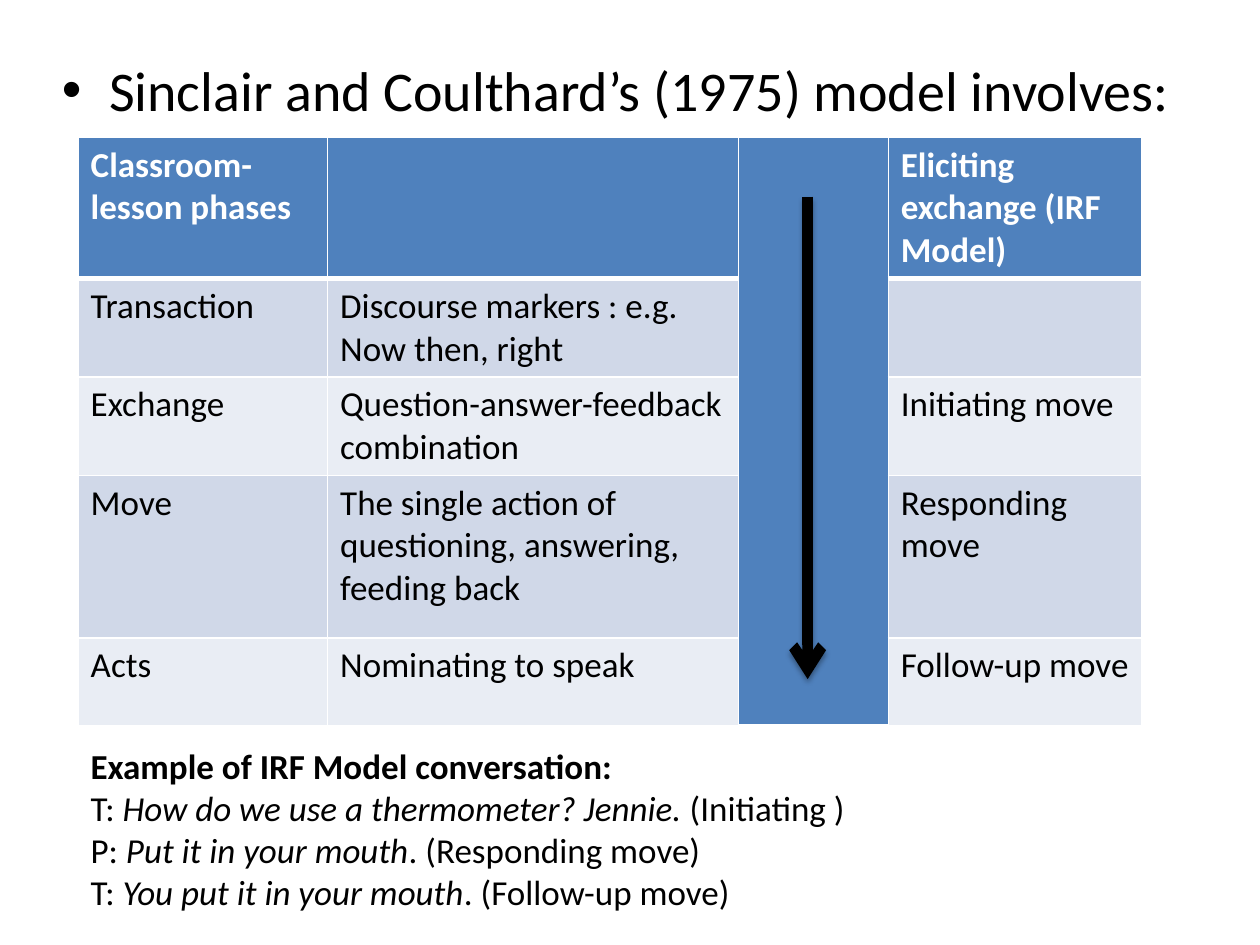
import pptx
import pptx.dml.color
import pptx.enum.dml
import pptx.enum.shapes
import pptx.oxml
import pptx.oxml.ns
import pptx.util
from pptx.util import Inches

FONT = "Calibri"
BLACK, WHITE, HEADER_BLUE = "000000", "FFFFFF", "4F81BD"
BANDS = ["D0D8E8", "E9EDF4"]

COLUMN_WIDTHS = [1.98, 3.26, 1.19, 2.01]
ROW_HEIGHTS = [0.99, 0.7, 0.7, 1.29, 0.7]
ARROW_COLUMN = 2
ROWS = [
    ["Classroom-lesson phases", "", "", "Eliciting exchange (IRF Model)"],
    ["Transaction", "Discourse markers : e.g. Now then, right", "", ""],
    ["Exchange", "Question-answer-feedback combination", "", "Initiating move"],
    ["Move", "The single action of questioning, answering, feeding back", "",
     "Responding move"],
    ["Acts", "Nominating to speak", "", "Follow-up move"],
]

# Speaker, utterance, comment
CONVERSATION = [
    ("T: ", "How do we use a thermometer? Jennie.", " (Initiating )"),
    ("P: ", "Put it in your mouth", ". (Responding move)"),
    ("T: ", "You put it in your mouth", ". (Follow-up move)"),
]


def color(value):
    return pptx.dml.color.RGBColor.from_string(value)


def xml(text):
    namespace = pptx.oxml.ns.nsdecls("a")
    return pptx.oxml.parse_xml(text.replace(" ", f" {namespace} ", 1))


def add_run(paragraph, text, size=20, fill=BLACK, bold=False, italic=False):
    run = paragraph.add_run()
    run.text = text
    font = run.font
    font.name, font.size = FONT, pptx.util.Pt(size)
    font.bold, font.italic = bold, italic
    font.color.rgb = color(fill)


def add_heading(slide, text):
    """Bulleted statement in the body placeholder; the slide has no title."""
    title = slide.shapes.title.element
    title.getparent().remove(title)
    body = slide.placeholders[1]
    body.left, body.top = Inches(0.39), Inches(0.39)
    body.width, body.height = Inches(9.3), Inches(6.8)
    add_run(body.text_frame.paragraphs[0], text, size=32)


def set_borders(cell, bottom_width):
    properties = cell._tc.get_or_add_tcPr()
    for side, width in [("L", 1), ("R", 1), ("T", 1), ("B", bottom_width)]:
        properties.append(xml(
            f'<a:ln{side} w="{pptx.util.Pt(width)}"><a:solidFill>'
            f'<a:srgbClr val="{WHITE}"/></a:solidFill></a:ln{side}>'))


def add_model_table(slide):
    frame = slide.shapes.add_table(
        len(ROWS), len(COLUMN_WIDTHS), Inches(0.62), Inches(1.09),
        Inches(sum(COLUMN_WIDTHS)), Inches(sum(ROW_HEIGHTS)))
    table = frame.table
    for column, width in zip(table.columns, COLUMN_WIDTHS):
        column.width = Inches(width)
    for row, height in zip(table.rows, ROW_HEIGHTS):
        row.height = Inches(height)

    for row_index, texts in enumerate(ROWS):
        is_header = row_index == 0
        for column_index, text in enumerate(texts):
            cell = table.cell(row_index, column_index)
            is_blue = is_header or column_index == ARROW_COLUMN
            set_borders(cell, 3 if is_header else 1)
            cell.fill.solid()
            cell.fill.fore_color.rgb = color(
                HEADER_BLUE if is_blue else BANDS[(row_index - 1) % 2])
            if text:
                add_run(cell.text_frame.paragraphs[0], text,
                        fill=WHITE if is_header else BLACK, bold=is_header)
    table.cell(0, ARROW_COLUMN).merge(table.cell(len(ROWS) - 1, ARROW_COLUMN))


def add_down_arrow(slide, x, top, bottom):
    arrow = slide.shapes.add_connector(
        pptx.enum.shapes.MSO_CONNECTOR.STRAIGHT,
        Inches(x), Inches(top), Inches(x), Inches(bottom))
    arrow.line.color.rgb = color(BLACK)
    arrow.line.width = pptx.util.Pt(6)
    arrow.line._get_or_add_ln().append(xml('<a:tailEnd type="arrow"/>'))
    # Soft shadow straight below
    arrow._element.spPr.append(xml(
        f'<a:effectLst ><a:outerShdw blurRad="{pptx.util.Pt(3.1)}" '
        f'dist="{pptx.util.Pt(1.8)}" dir="5400000" rotWithShape="0">'
        f'<a:srgbClr val="{BLACK}"><a:alpha val="35000"/></a:srgbClr>'
        '</a:outerShdw></a:effectLst>'))


def add_conversation(slide):
    box = slide.shapes.add_textbox(
        Inches(0.62), Inches(5.86), Inches(8.59), Inches(1.45))
    text_frame = box.text_frame
    text_frame.word_wrap = True
    add_run(text_frame.paragraphs[0], "Example of IRF Model conversation:",
            bold=True)
    for speaker, utterance, comment in CONVERSATION:
        paragraph = text_frame.add_paragraph()
        add_run(paragraph, speaker)
        add_run(paragraph, utterance, italic=True)
        add_run(paragraph, comment)


def main():
    presentation = pptx.Presentation()
    presentation.slide_width = Inches(10)
    presentation.slide_height = Inches(7.5)
    slide = presentation.slides.add_slide(presentation.slide_layouts[1])

    add_heading(slide, "Sinclair and Coulthard’s (1975) model involves:")
    add_model_table(slide)
    add_down_arrow(slide, 6.41, 1.56, 5.39)
    add_conversation(slide)
    presentation.save("out.pptx")


if __name__ == "__main__":
    main()
